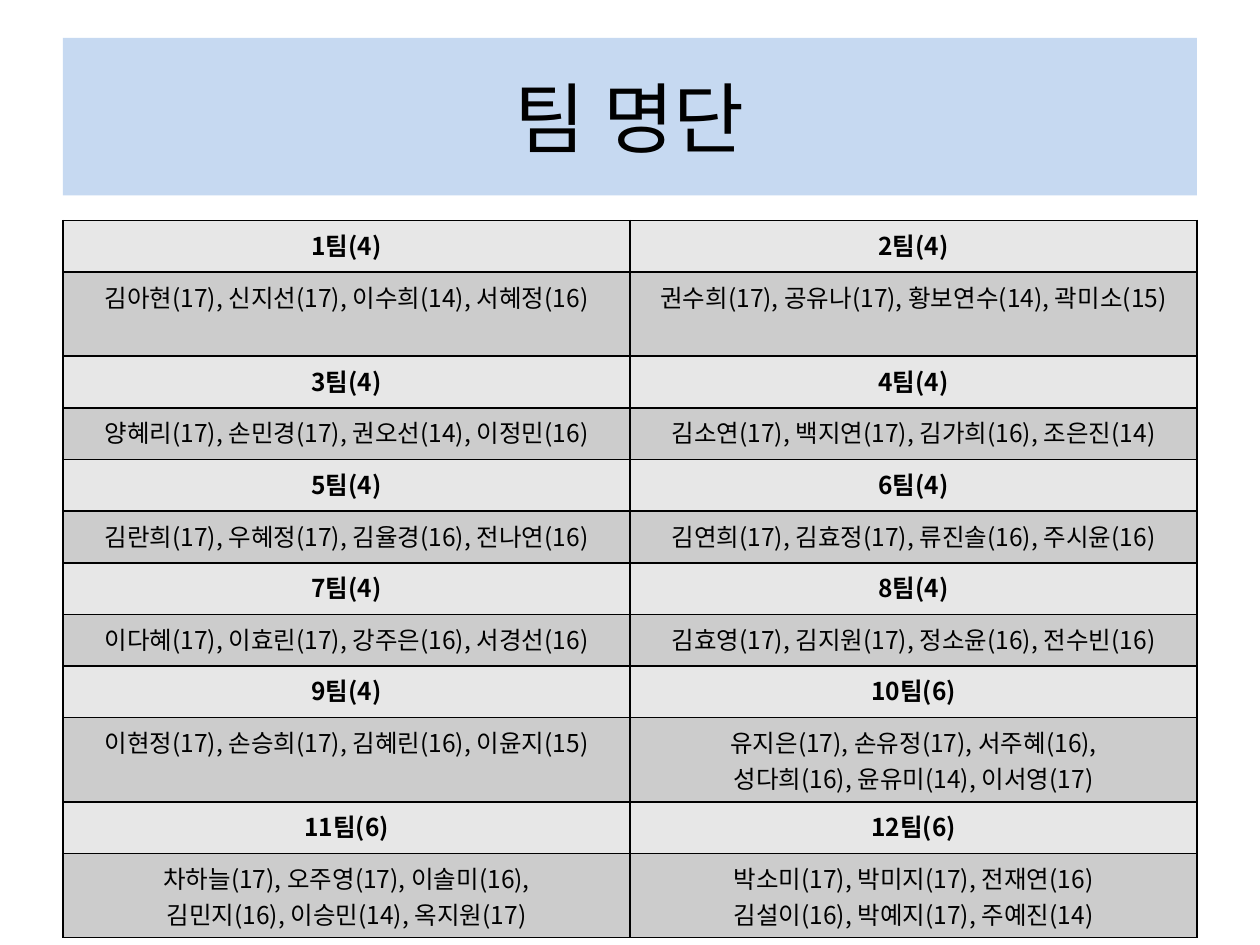
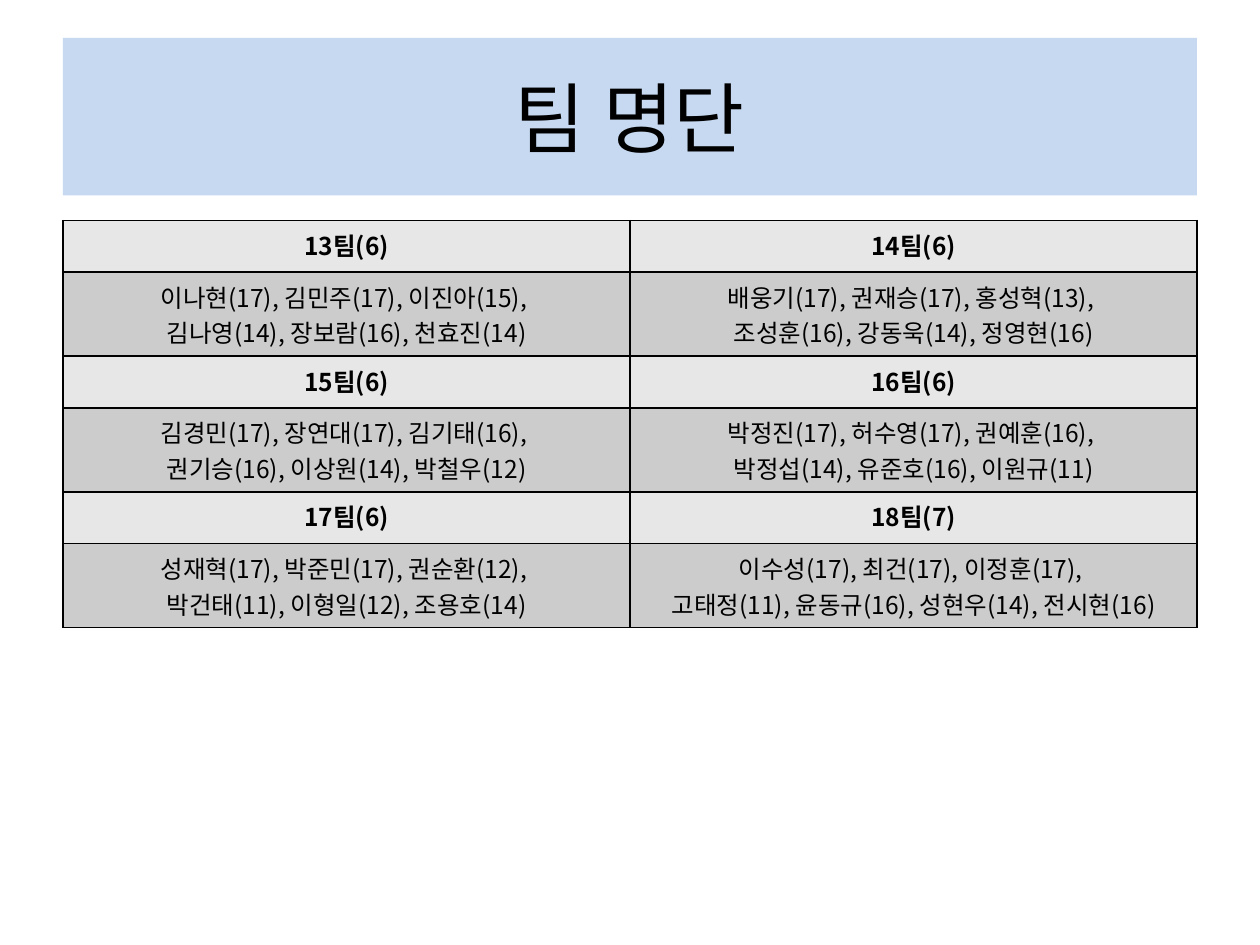
from copy import deepcopy
from dataclasses import dataclass

from lxml import etree
from pptx import Presentation
from pptx import util as u
from pptx.dml.color import RGBColor
from pptx.enum import shapes, text
from pptx.oxml import ns


@dataclass(frozen=True)
class Theme:
    font: str = "Noto Sans CJK KR"
    ink: str = "000000"
    band: str = "C6D9F1"
    team: str = "E7E7E7"
    members: str = "CCCCCC"
    title_size: int = 44
    table_size: int = 14
    border: int = 1


theme = Theme()


def write(frame, words, size=theme.table_size, bold=False):
    frame.text = words
    for para in frame.paragraphs:
        para.alignment = text.PP_ALIGN.CENTER
        for span in para.runs:
            span.font.size = u.Pt(size)
            span.font.bold = bold
            span.font.name = theme.font
            span.font.color.rgb = RGBColor.from_string(theme.ink)
            properties = span.font._element
            etree.SubElement(properties, ns.qn("a:ea"), typeface=theme.font)
        for line_break in para._p.findall(ns.qn("a:br")):
            line_break.insert(0, deepcopy(properties))


def paint(cell, color):
    cell.fill.solid()
    cell.fill.fore_color.rgb = RGBColor.from_string(color)
    properties = cell._tc.get_or_add_tcPr()
    for place, side in enumerate(("lnL", "lnR", "lnT", "lnB")):
        line = etree.Element(ns.qn(f"a:{side}"), w=str(u.Pt(theme.border)))
        fill = etree.SubElement(line, ns.qn("a:solidFill"))
        etree.SubElement(fill, ns.qn("a:srgbClr"), val=theme.ink)
        properties.insert(place, line)


rosters = [
    [
        "김아현(17), 신지선(17), 이수희(14), 서혜정(16)",
        "권수희(17), 공유나(17), 황보연수(14), 곽미소(15)",
        "양혜리(17), 손민경(17), 권오선(14), 이정민(16)",
        "김소연(17), 백지연(17), 김가희(16), 조은진(14)",
        "김란희(17), 우혜정(17), 김율경(16), 전나연(16)",
        "김연희(17), 김효정(17), 류진솔(16), 주시윤(16)",
        "이다혜(17), 이효린(17), 강주은(16), 서경선(16)",
        "김효영(17), 김지원(17), 정소윤(16), 전수빈(16)",
        "이현정(17), 손승희(17), 김혜린(16), 이윤지(15)",
        "유지은(17), 손유정(17), 서주혜(16),\n성다희(16), 윤유미(14), 이서영(17)",
        "차하늘(17), 오주영(17), 이솔미(16),\n김민지(16), 이승민(14), 옥지원(17)",
        "박소미(17), 박미지(17), 전재연(16)\n김설이(16), 박예지(17), 주예진(14)",
    ],
    [
        "이나현(17), 김민주(17), 이진아(15), \v김나영(14), 장보람(16), 천효진(14)",
        "배웅기(17), 권재승(17), 홍성혁(13), \v조성훈(16), 강동욱(14), 정영현(16)",
        "김경민(17), 장연대(17), 김기태(16), \v권기승(16), 이상원(14), 박철우(12)",
        "박정진(17), 허수영(17), 권예훈(16), \v박정섭(14), 유준호(16), 이원규(11)",
        "성재혁(17), 박준민(17), 권순환(12), \v박건태(11), 이형일(12), 조용호(14)",
        "이수성(17), 최건(17), 이정훈(17), \v고태정(11), 윤동규(16), 성현우(14), 전시현(16)",
    ],
]

deck = Presentation()
deck.slide_width = u.Inches(10)
deck.slide_height = u.Inches(7.5)
left, width = u.Inches(0.5), u.Inches(9)
row_height = u.Inches(0.41)
team_number = 0

for roster in rosters:
    page = deck.slides.add_slide(deck.slide_layouts[6])

    band = page.shapes.add_shape(
        shapes.MSO_SHAPE.RECTANGLE, left, u.Inches(0.3), width, u.Inches(1.25)
    )
    band.shadow.inherit = False
    band.fill.solid()
    band.fill.fore_color.rgb = RGBColor.from_string(theme.band)
    band.line.fill.background()
    band.text_frame.vertical_anchor = text.MSO_ANCHOR.MIDDLE
    write(band.text_frame, "팀 명단", size=theme.title_size)

    row_count = len(roster)
    table = page.shapes.add_table(
        row_count, 2, left, u.Inches(1.75), width, row_height * row_count
    ).table
    for row in table.rows:
        row.height = row_height

    for index, members in enumerate(roster):
        team_number += 1
        pair, column = divmod(index, 2)
        team_cell = table.cell(2 * pair, column)
        members_cell = table.cell(2 * pair + 1, column)
        write(team_cell.text_frame, f"{team_number}팀({members.count('(')})", bold=True)
        write(members_cell.text_frame, members)
        paint(team_cell, theme.team)
        paint(members_cell, theme.members)

deck.save("out.pptx")
